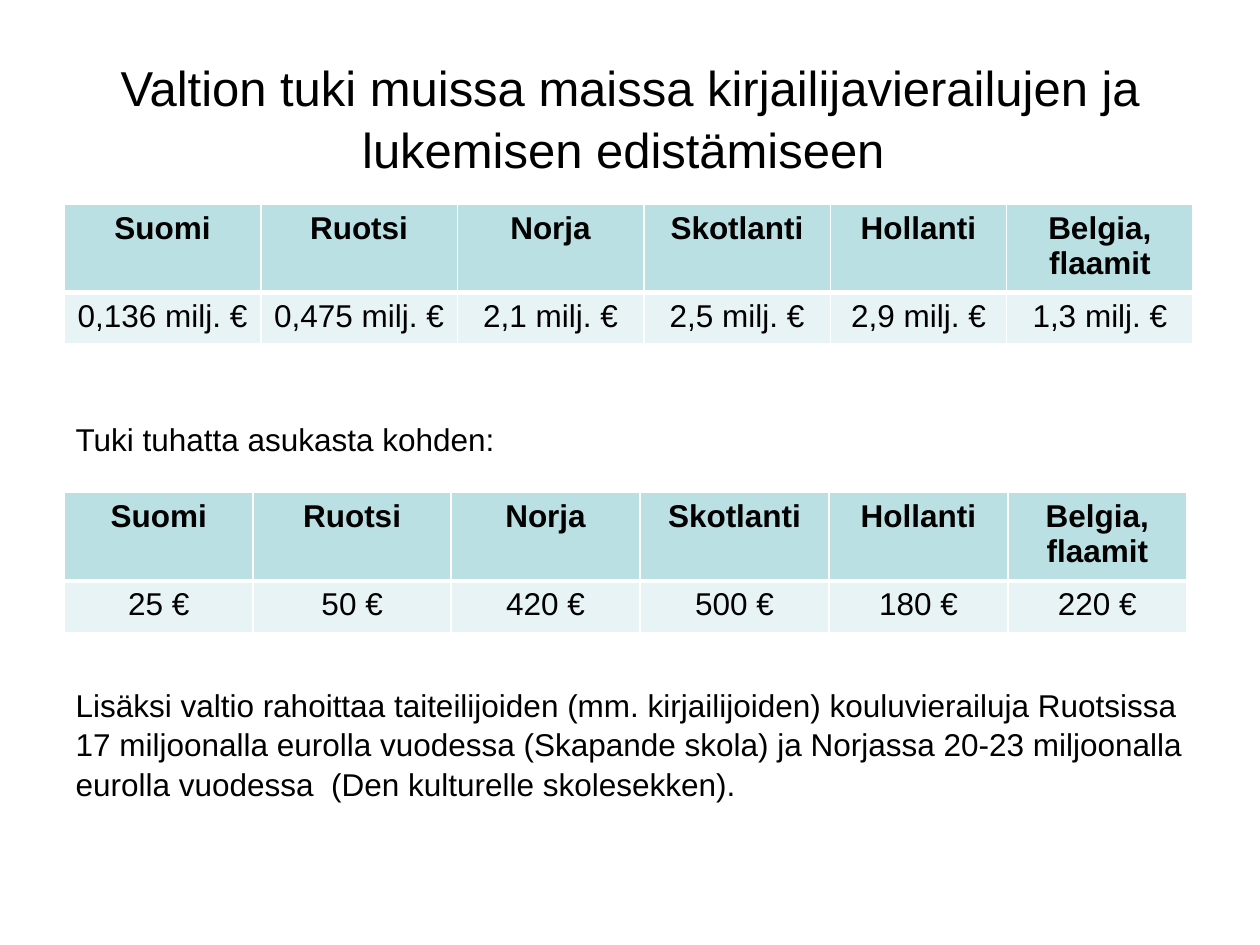
from dataclasses import dataclass

from lxml.etree import SubElement
from pptx import Presentation
from pptx.dml.color import RGBColor
from pptx.enum.text import MSO_ANCHOR, MSO_AUTO_SIZE, PP_ALIGN
from pptx.oxml.ns import qn
from pptx.util import Inches, Pt


@dataclass(frozen=True)
class Theme:
    font: str = "Arial"
    text: str = "000000"
    header: str = "BBE0E3"
    row: str = "E7F3F4"
    border: str = "FFFFFF"
    title_size: int = 28
    body_size: int = 18


THEME = Theme()
COUNTRIES = ["Suomi", "Ruotsi", "Norja", "Skotlanti", "Hollanti", "Belgia, flaamit"]
TOTALS = ["0,136 milj. €", "0,475 milj. €", "2,1 milj. €",
          "2,5 milj. €", "2,9 milj. €", "1,3 milj. €"]
PER_THOUSAND = ["25 €", "50 €", "420 €", "500 €", "180 €", "220 €"]


def write(p, text, size=THEME.body_size, bold=False, align=PP_ALIGN.LEFT,
          before=0, spacing=None):
    p.alignment = align
    p.space_before = Pt(before)
    p.line_spacing = spacing
    r = p.add_run()
    r.text = text
    r.font.name = THEME.font
    r.font.size = Pt(size)
    r.font.bold = bold
    r.font.color.rgb = RGBColor.from_string(THEME.text)


def place(s, left, top, width, height):
    s.left, s.top = Inches(left), Inches(top)
    s.width, s.height = Inches(width), Inches(height)
    s.text_frame.auto_size = MSO_AUTO_SIZE.NONE
    return s.text_frame


def remove_bullet(p):
    pPr = p._p.get_or_add_pPr()
    pPr.set("marL", "0")
    pPr.set("indent", "0")
    SubElement(pPr, qn("a:buNone"))


def add_title(slide, text):
    tf = place(slide.shapes.title, 0.5, 0.3, 9, 1.25)
    tf.vertical_anchor = MSO_ANCHOR.MIDDLE
    write(tf.paragraphs[0], text, size=THEME.title_size,
          align=PP_ALIGN.CENTER, spacing=1.05)


def add_body(slide, texts, top_margin, gap):
    tf = place(slide.placeholders[1], 0.5, 1.47, 9, 5.23)
    tf.margin_top = Inches(top_margin)
    for i, text in enumerate(texts):
        p = tf.add_paragraph() if i else tf.paragraphs[0]
        write(p, text, before=gap if i else 0, spacing=1.05)
        remove_bullet(p)


def set_borders(cell, bottom):
    tcPr = cell._tc.get_or_add_tcPr()
    for side, width in (("L", 1), ("R", 1), ("T", 1), ("B", bottom)):
        ln = SubElement(tcPr, qn(f"a:ln{side}"), w=str(Pt(width)))
        SubElement(SubElement(ln, qn("a:solidFill")), qn("a:srgbClr"), val=THEME.border)


def add_support_table(slide, top, widths, values):
    heights = [0.7, 0.41]
    table = slide.shapes.add_table(
        len(heights), len(widths), Inches(0.51), Inches(top),
        Inches(sum(widths)), Inches(sum(heights))).table
    for col, width in zip(table.columns, widths):
        col.width = Inches(width)
    for i, texts in enumerate([COUNTRIES, values]):
        table.rows[i].height = Inches(heights[i])
        header = i == 0
        for cell, text in zip(table.rows[i].cells, texts):
            set_borders(cell, bottom=3 if header else 1)
            cell.fill.solid()
            cell.fill.fore_color.rgb = RGBColor.from_string(
                THEME.header if header else THEME.row)
            write(cell.text_frame.paragraphs[0], text, bold=header,
                  align=PP_ALIGN.CENTER)


def main():
    prs = Presentation()
    prs.slide_width, prs.slide_height = Inches(10), Inches(7.5)
    slide = prs.slides.add_slide(prs.slide_layouts[1])
    add_title(slide, "Valtion tuki muissa maissa kirjailijavierailujen ja "
                     "lukemisen edistämiseen ")
    add_body(slide, [
        "Tuki tuhatta asukasta kohden:",
        "Lisäksi valtio rahoittaa taiteilijoiden (mm. kirjailijoiden) kouluvierailuja "
        "Ruotsissa 17 miljoonalla eurolla vuodessa (Skapande skola) ja Norjassa 20-23 "
        "miljoonalla eurolla vuodessa  (Den kulturelle skolesekken).",
    ], top_margin=1.85, gap=129)
    add_support_table(slide, 1.62, [1.56, 1.56, 1.48, 1.48, 1.4, 1.48], TOTALS)
    add_support_table(slide, 3.91, [1.5, 1.57, 1.5, 1.5, 1.42, 1.42], PER_THOUSAND)
    prs.save("out.pptx")


if __name__ == "__main__":
    main()
